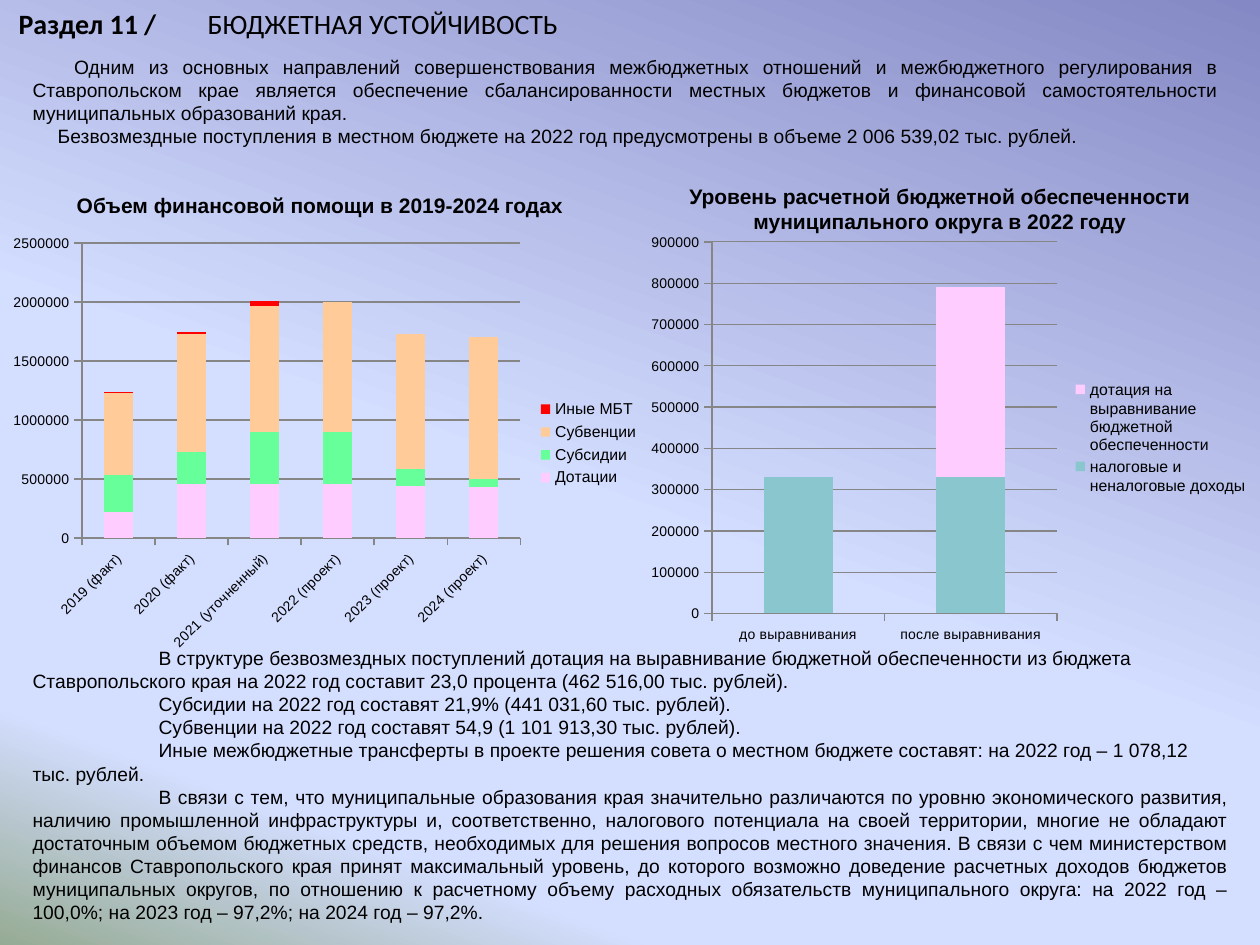
from dataclasses import dataclass

from lxml import etree
from pptx import Presentation
from pptx import util as u
from pptx.chart.data import CategoryChartData
from pptx.dml.color import RGBColor
from pptx.enum import chart as chart_enum, text
from pptx.oxml import ns


@dataclass(frozen=True)
class Theme:
    """Colours, fonts and type sizes of the slide."""
    ink: str = "000000"
    axis: str = "868686"
    pink: str = "FFCCFF"
    green: str = "66FF99"
    peach: str = "FFCC99"
    red: str = "FF0000"
    teal: str = "8AC6CD"
    background: tuple = ((0, "8488C4"), (53, "D4DEFF"), (83, "D4DEFF"), (100, "96AB94"))
    heading_font: str = "Calibri"
    body_font: str = "Arial"
    heading: int = 16
    chart_title: int = 12
    body: int = 11
    legend: int = 9
    axis_label: int = 8


THEME = Theme()
LEFT, CENTER, JUSTIFY = text.PP_ALIGN.LEFT, text.PP_ALIGN.CENTER, text.PP_ALIGN.JUSTIFY

INTRO = [
    (0.33, JUSTIFY, "Одним из основных направлений совершенствования межбюджетных отношений и межбюджетного регулирования в Ставропольском крае является обеспечение сбалансированности местных бюджетов и финансовой самостоятельности муниципальных образований края."),
    (0.2, JUSTIFY, "Безвозмездные поступления в местном бюджете на 2022 год предусмотрены в объеме 2 006 539,02 тыс. рублей."),
]
DETAILS = [
    (1, LEFT, "В структуре безвозмездных поступлений дотация на выравнивание бюджетной обеспеченности из бюджета Ставропольского края на 2022 год составит 23,0 процента (462 516,00 тыс. рублей)."),
    (1, LEFT, "Субсидии на 2022 год составят 21,9% (441 031,60 тыс. рублей)."),
    (1, LEFT, "Субвенции на 2022 год составят 54,9 (1 101 913,30 тыс. рублей)."),
    (1, LEFT, "Иные межбюджетные трансферты в проекте решения совета о местном бюджете составят: на 2022 год – 1 078,12 тыс. рублей."),
    (1, JUSTIFY, "В связи с тем, что муниципальные образования края значительно различаются по уровню экономического развития, наличию промышленной инфраструктуры и, соответственно, налогового потенциала на своей территории, многие не обладают достаточным объемом бюджетных средств, необходимых для решения вопросов местного значения. В связи с чем министерством финансов Ставропольского края принят максимальный уровень, до которого возможно доведение расчетных доходов бюджетов муниципальных округов, по отношению к расчетному объему расходных обязательств муниципального округа: на 2022 год – 100,0%; на 2023 год – 97,2%; на 2024 год – 97,2%."),
]
AID_YEARS = ["2019 (факт)", "2020 (факт)", "2021 (уточненный)",
             "2022 (проект)", "2023 (проект)", "2024 (проект)"]
AID_SERIES = [
    ("Дотации", THEME.pink, [220000, 460000, 460000, 460000, 440000, 430000]),
    ("Субсидии", THEME.green, [310000, 270000, 440000, 440000, 140000, 70000]),
    ("Субвенции", THEME.peach, [700000, 1000000, 1070000, 1100000, 1150000, 1200000]),
    ("Иные МБТ", THEME.red, [10000, 20000, 40000, 0, 0, 0]),
]
LEVEL_STAGES = ["до выравнивания", "после выравнивания"]
LEVEL_SERIES = [
    ("налоговые и неналоговые доходы", THEME.teal, [330000, 330000]),
    ("дотация на выравнивание бюджетной обеспеченности", THEME.pink, [None, 460000]),
]


def apply(target, values):
    """Set every attribute named in a dict of format values."""
    for name, value in values.items():
        setattr(target, name, value)


def style_font(font, size, name=THEME.body_font, bold=False):
    """Give a font its face, size, weight and ink colour."""
    apply(font, {"name": name, "size": u.Pt(size), "bold": bold})
    font.color.rgb = RGBColor.from_string(THEME.ink)


def paint_background(slide):
    """Fill the slide background with the theme gradient."""
    fill = slide.background.fill
    fill.gradient()
    fill.gradient_angle = 250
    stops = slide.element.xpath(".//a:gsLst")[0]
    for stop in list(stops):
        stops.remove(stop)
    for position, colour in THEME.background:
        stop = etree.SubElement(stops, ns.qn("a:gs"), pos=str(position * 1000))
        etree.SubElement(stop, ns.qn("a:srgbClr"), val=colour)


def add_text_frame(slide, box):
    """Add a wrapping text box and return its frame."""
    frame = slide.shapes.add_textbox(*map(u.Inches, box)).text_frame
    frame.word_wrap = True
    return frame


def add_heading(slide):
    """Add the section label and the slide title on one tabbed line."""
    paragraph = add_text_frame(slide, (0, 0, 10, 0.37)).paragraphs[0]
    properties = paragraph._p.get_or_add_pPr()
    apply_margin = {"marL": u.Inches(0.05), "indent": 0}
    for name, value in apply_margin.items():
        properties.set(name, str(value))
    tabs = etree.SubElement(properties, ns.qn("a:tabLst"))
    etree.SubElement(tabs, ns.qn("a:tab"), pos=str(u.Inches(3.5)), algn="l")
    for content, bold in (("Раздел 11 /\t", True), ("БЮДЖЕТНАЯ УСТОЙЧИВОСТЬ", False)):
        run = paragraph.add_run()
        run.text = content
        style_font(run.font, THEME.heading, THEME.heading_font, bold)


def add_paragraphs(slide, box, paragraphs, size=THEME.body, bold=False):
    """Add a text box of paragraphs given as indent, alignment and wording."""
    frame = add_text_frame(slide, box)
    for index, (indent, alignment, content) in enumerate(paragraphs):
        paragraph = frame.add_paragraph() if index else frame.paragraphs[0]
        paragraph.alignment = alignment
        paragraph._p.get_or_add_pPr().set("indent", str(u.Inches(indent)))
        run = paragraph.add_run()
        run.text = content
        style_font(run.font, size, bold=bold)


def place(parent, box, area, inner=False):
    """Fix a chart part at an area given in slide inches."""
    for old in parent.findall(ns.qn("c:layout")):
        parent.remove(old)
    layout = etree.Element(ns.qn("c:layout"))
    manual = etree.SubElement(layout, ns.qn("c:manualLayout"))
    left, top, width, height = box
    values = {"layoutTarget": "inner"} if inner else {}
    values.update(xMode="edge", yMode="edge",
                  x=(area[0] - left) / width, y=(area[1] - top) / height,
                  w=area[2] / width, h=area[3] / height)
    for name, value in values.items():
        etree.SubElement(manual, ns.qn("c:" + name), val=str(value))
    position = parent.find(ns.qn("c:legendPos"))
    if position is None:
        parent.insert(0, layout)
    else:
        position.addnext(layout)


def style_axis(axis, values):
    """Style an axis with its line, ticks and labels."""
    apply(axis, {"major_tick_mark": chart_enum.XL_TICK_MARK.OUTSIDE,
                 "minor_tick_mark": chart_enum.XL_TICK_MARK.NONE, **values})
    style_font(axis.tick_labels.font, THEME.axis_label)
    lines = [axis.format.line]
    if axis.has_major_gridlines:
        lines.append(axis.major_gridlines.format.line)
    for line in lines:
        line.color.rgb = RGBColor.from_string(THEME.axis)
        line.width = u.Pt(0.75)


def add_stacked_chart(slide, box, categories, series, scale, plot_area, legend_area, rotation=0):
    """Add a stacked column chart with a legend on the right."""
    data = CategoryChartData(number_format="General")
    data.categories = categories
    for name, _, values in series:
        data.add_series(name, values)
    chart = slide.shapes.add_chart(chart_enum.XL_CHART_TYPE.COLUMN_STACKED,
                                   *map(u.Inches, box), data).chart
    apply(chart, {"has_title": False, "has_legend": True})
    style_font(chart.font, THEME.axis_label)
    apply(chart.legend, {"position": chart_enum.XL_LEGEND_POSITION.RIGHT,
                         "include_in_layout": False})
    style_font(chart.legend.font, THEME.legend)
    plot = chart.plots[0]
    apply(plot, {"gap_width": 150, "overlap": 100, "vary_by_categories": False})
    for column, (_, colour, _) in zip(plot.series, series):
        column.format.fill.solid()
        column.format.fill.fore_color.rgb = RGBColor.from_string(colour)
    style_axis(chart.category_axis, {"has_major_gridlines": False})
    maximum, step = scale
    style_axis(chart.value_axis, {"has_major_gridlines": True, "minimum_scale": 0,
                                  "maximum_scale": maximum, "major_unit": step})
    if rotation:
        body = chart.category_axis._element.xpath("./c:txPr/a:bodyPr")[0]
        body.set("rot", str(rotation * 60000))
    place(chart._chartSpace.xpath(".//c:plotArea")[0], box, plot_area, inner=True)
    place(chart._chartSpace.xpath(".//c:legend")[0], box, legend_area)


def main():
    """Build the budget sustainability slide."""
    presentation = Presentation()
    apply(presentation, {"slide_width": u.Inches(10), "slide_height": u.Inches(7.5)})
    slide = presentation.slides.add_slide(presentation.slide_layouts[6])
    paint_background(slide)
    add_heading(slide)
    add_paragraphs(slide, (0.16, 0.39, 9.61, 0.84), INTRO)
    add_stacked_chart(slide, (0, 1.8, 5.16, 3.44), AID_YEARS, AID_SERIES, (2500000, 500000),
                      (0.65, 1.93, 3.48, 2.34), (4.24, 3.14, 0.86, 0.76), rotation=-45)
    add_paragraphs(slide, (0.16, 5.08, 9.69, 2.51), DETAILS)
    for box, title in (
        ((0, 1.48, 5.08, 0.3), "Объем финансовой помощи в 2019-2024 годах"),
        ((4.92, 1.41, 5.08, 0.5), "Уровень расчетной бюджетной обеспеченности муниципального округа в 2022 году"),
    ):
        add_paragraphs(slide, box, [(0, CENTER, title)], THEME.chart_title, bold=True)
    add_stacked_chart(slide, (5.08, 1.8, 4.92, 3.36), LEVEL_STAGES, LEVEL_SERIES, (900000, 100000),
                      (5.65, 1.92, 2.74, 2.95), (8.49, 3, 1.44, 0.96))
    presentation.save("out.pptx")


if __name__ == "__main__":
    main()
